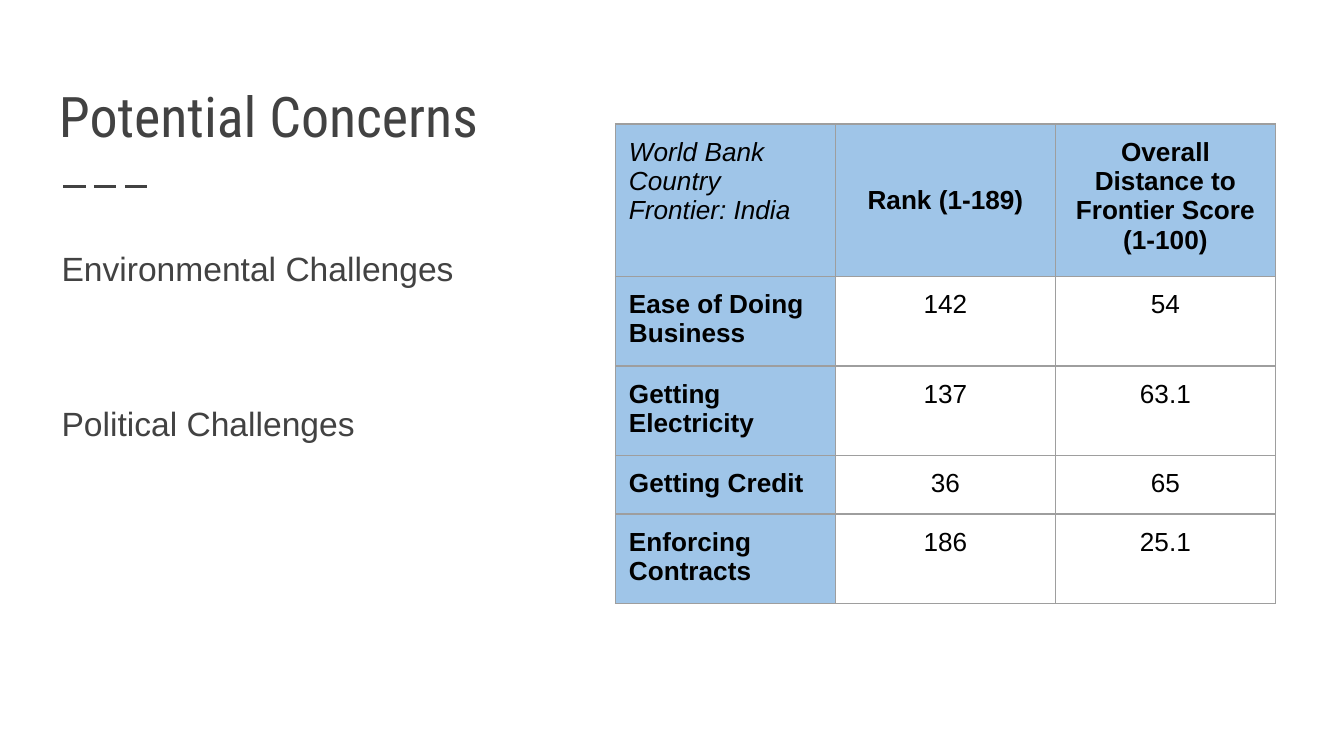
from pptx import Presentation
from pptx.dml.color import RGBColor
from pptx.enum.dml import MSO_LINE
from pptx.enum.shapes import MSO_CONNECTOR
from pptx.enum.text import MSO_ANCHOR, PP_ALIGN
from pptx.oxml import parse_xml
from pptx.oxml.ns import nsdecls
from pptx.util import Pt

COLORS = {"text": "424242", "table": "000000", "label": "9FC5E8", "border": "9E9E9E"}
TITLE = {"name": "Roboto Condensed", "size": Pt(30)}
BODY = {"name": "Arial", "size": Pt(18)}
CELL = {"name": "Arial", "size": Pt(14)}
INSET = Pt(7.2)
MARGINS = {f"margin_{side}": INSET for side in ("left", "right", "top", "bottom")}
CHALLENGES = ["Environmental Challenges", "Political Challenges"]
RANKINGS = [
    ["World Bank Country Frontier: India", "Rank (1-189)",
     "Overall Distance to Frontier Score (1-100)"],
    ["Ease of Doing Business", "142", "54"],
    ["Getting Electricity", "137", "63.1"],
    ["Getting Credit", "36", "65"],
    ["Enforcing Contracts", "186", "25.1"],
]
ROW_HEIGHTS = [77, 46, 46, 30, 46]
COLUMN_WIDTH = 117.84


def apply_format(target, values):
    """Set each attribute of the target from a dict."""
    for name, value in values.items():
        setattr(target, name, value)


def write_span(para, text, font, color):
    """Add one formatted run to a paragraph."""
    span = para.add_run()
    span.text = text
    apply_format(span.font, font)
    span.font.color.rgb = RGBColor.from_string(COLORS[color])


def add_text(page, area, lines, font, para_format, anchor=MSO_ANCHOR.TOP):
    """Add a wrapped text box with one paragraph per line."""
    frame = page.shapes.add_textbox(*map(Pt, area)).text_frame
    apply_format(frame, {"word_wrap": True, "vertical_anchor": anchor, **MARGINS})
    for index, line in enumerate(lines):
        para = frame.add_paragraph() if index else frame.paragraphs[0]
        apply_format(para, para_format)
        write_span(para, line, font, "text")


def add_dashed_rule(page, left, right, top):
    """Draw the short dashed rule under the title."""
    rule = page.shapes.add_connector(
        MSO_CONNECTOR.STRAIGHT, Pt(left), Pt(top), Pt(right), Pt(top))
    apply_format(rule.line, {"width": Pt(1.5), "dash_style": MSO_LINE.LONG_DASH})
    rule.line.color.rgb = RGBColor.from_string(COLORS["text"])
    rule._element.spPr.append(parse_xml(f"<a:effectLst {nsdecls('a')}/>"))


def add_borders(cell):
    """Outline a table cell on all four sides."""
    properties = cell._tc.get_or_add_tcPr()
    for side in "LRTB":
        properties.append(parse_xml(
            f'<a:ln{side} {nsdecls("a")} w="{Pt(0.75)}"><a:solidFill>'
            f'<a:srgbClr val="{COLORS["border"]}"/></a:solidFill></a:ln{side}>'))


def fill_cell(cell, text, row, column):
    """Write and style a cell according to its place in the table."""
    header, label = row == 0, column == 0
    add_borders(cell)
    if header or label:
        cell.fill.solid()
        cell.fill.fore_color.rgb = RGBColor.from_string(COLORS["label"])
    else:
        cell.fill.background()
    middle = header and column == 1
    apply_format(cell, {
        "vertical_anchor": MSO_ANCHOR.MIDDLE if middle else MSO_ANCHOR.TOP, **MARGINS})
    para = cell.text_frame.paragraphs[0]
    para.alignment = PP_ALIGN.LEFT if label else PP_ALIGN.CENTER
    font = {**CELL, "bold": header != label, "italic": header and label}
    write_span(para, text, font, "table")


def add_rankings(page, left, top):
    """Add the table of rankings."""
    columns = len(RANKINGS[0])
    table = page.shapes.add_table(
        len(RANKINGS), columns, Pt(left), Pt(top),
        Pt(COLUMN_WIDTH * columns), Pt(sum(ROW_HEIGHTS))).table
    apply_format(table, {"first_row": False, "horz_banding": False})
    for row, texts in enumerate(RANKINGS):
        table.rows[row].height = Pt(ROW_HEIGHTS[row])
        for column, text in enumerate(texts):
            fill_cell(table.cell(row, column), text, row, column)


def main():
    """Build the slide and save the deck."""
    deck = Presentation()
    apply_format(deck, {"slide_width": Pt(720), "slide_height": Pt(405)})
    page = deck.slides.add_slide(deck.slide_layouts[6])
    add_dashed_rule(page, 33.84, 82.08, 100.08)
    add_text(page, (24.48, 29.52, 671.04, 57.6), ["Potential Concerns"],
             TITLE, {}, MSO_ANCHOR.BOTTOM)
    add_text(page, (25.92, 122.4, 263.52, 244.08), CHALLENGES,
             BODY, {"line_spacing": 1.15, "space_after": Pt(58)})
    add_rankings(page, 329.76, 66.4)
    deck.save("out.pptx")


if __name__ == "__main__":
    main()
